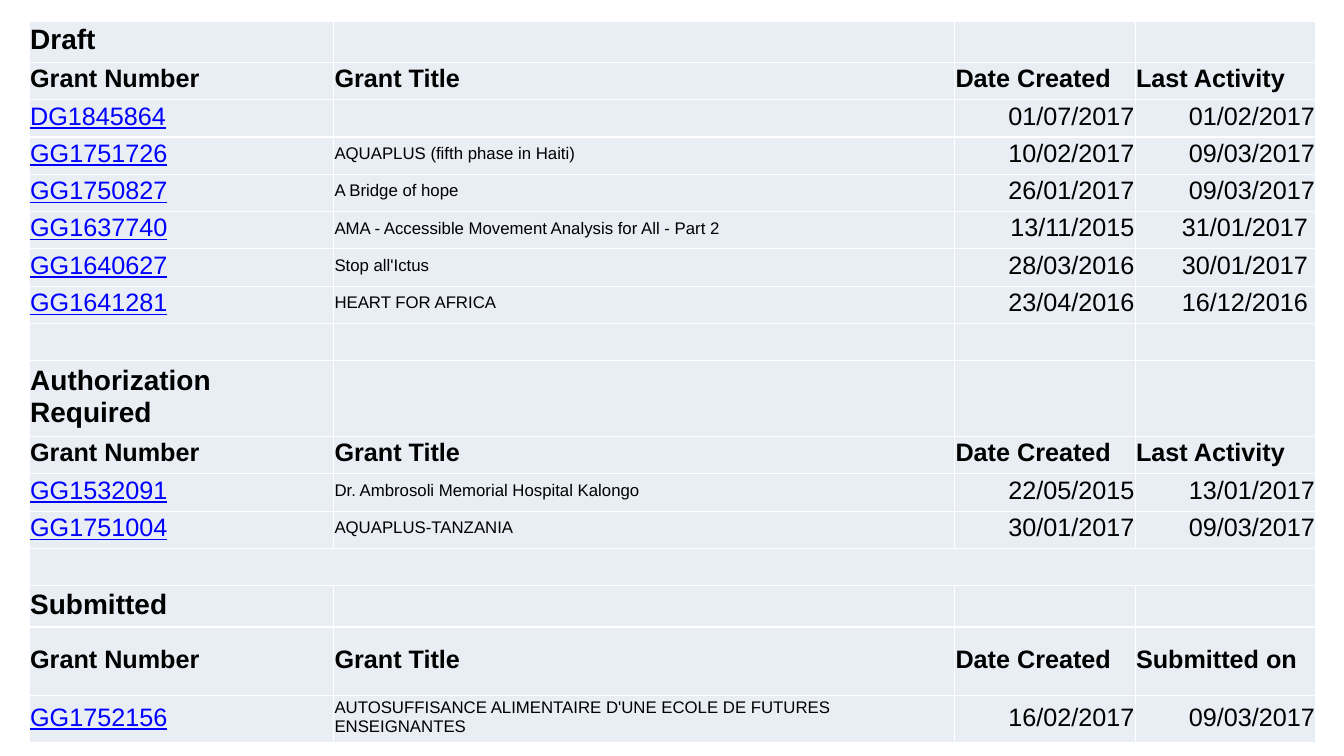
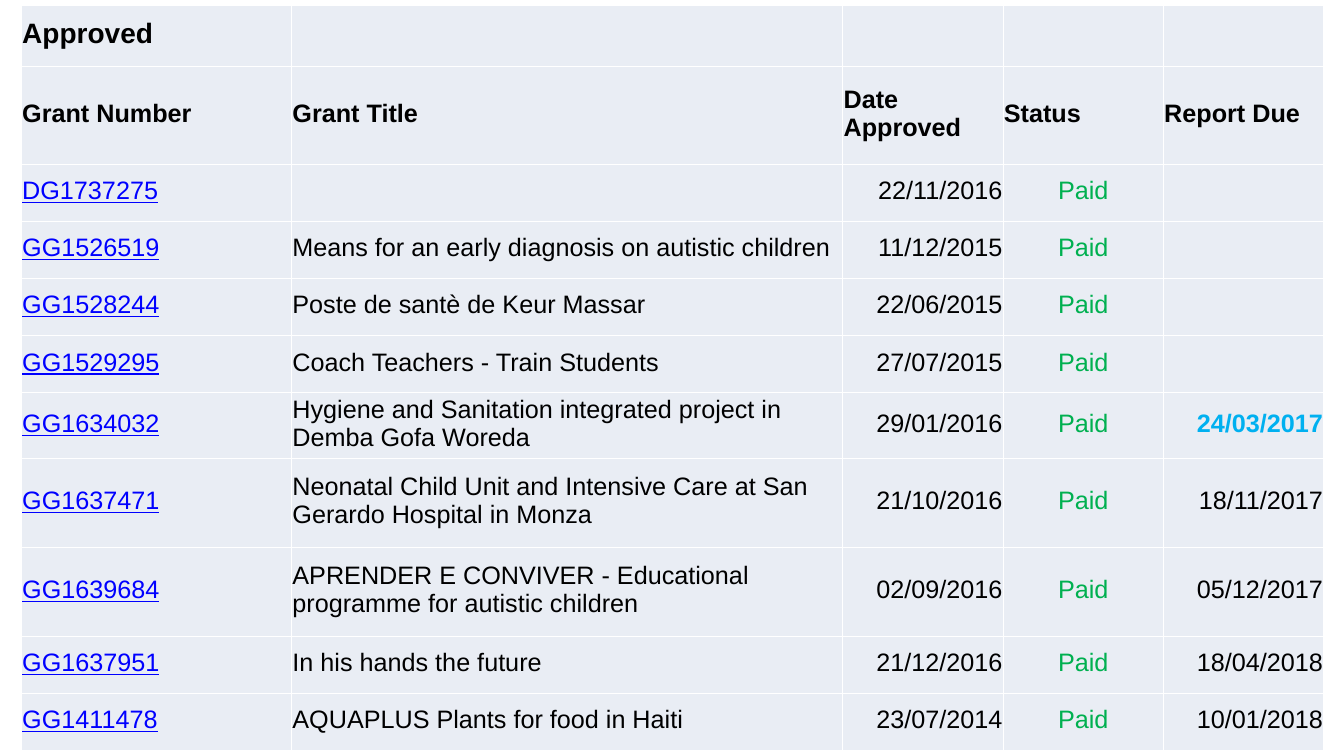
from lxml import etree
from pptx import Presentation
from pptx import util as u
from pptx.dml.color import RGBColor
from pptx.enum import text
from pptx.oxml import ns

Cm, Pt = u.Cm, u.Pt
ALIGN = text.PP_ALIGN

COLORS = {
    "cell": "E9EDF4",
    "border": "FFFFFF",
    "text": "000000",
    "grant": "0000FF",
    "paid": "00B050",
    "next_due": "00B0F0",
}
FONT = "Arial"
NEXT_DUE = "24/03/2017"
INDENTED_DATES = {"31/01/2017", "30/01/2017", "16/12/2016"}

OPEN_COLUMNS = ["Grant Number", "Grant Title", "Date Created", "Last Activity"]
SUBMITTED_COLUMNS = OPEN_COLUMNS[:3] + ["Submitted on"]
APPROVED_COLUMNS = ["Grant Number", "Grant Title", "Date Approved", "Status", "Report Due"]

PENDING = {
    "left": 0.74, "top": 0.53, "widths": [7.67, 15.65, 4.55, 4.55],
    "row_height": 0.94, "title_size": 12,
    "heights": {0: 1.04, 9: 1.91, 14: 1.04, 15: 1.73, 16: 1.19},
    "merged_rows": [13],
    "rows": [
        ("section", ["Draft"]),
        ("header", OPEN_COLUMNS),
        ("grant", ["DG1845864", "", "01/07/2017", "01/02/2017"]),
        ("grant", ["GG1751726", "AQUAPLUS (fifth phase in Haiti)", "10/02/2017", "09/03/2017"]),
        ("grant", ["GG1750827", "A Bridge of hope", "26/01/2017", "09/03/2017"]),
        ("grant", ["GG1637740", "AMA - Accessible Movement Analysis for All - Part 2",
                   "13/11/2015", "31/01/2017"]),
        ("grant", ["GG1640627", "Stop all'Ictus", "28/03/2016", "30/01/2017"]),
        ("grant", ["GG1641281", "HEART FOR AFRICA", "23/04/2016", "16/12/2016"]),
        ("gap", []),
        ("section", ["Authorization Required"]),
        ("header", OPEN_COLUMNS),
        ("grant", ["GG1532091", "Dr. Ambrosoli Memorial Hospital Kalongo",
                   "22/05/2015", "13/01/2017"]),
        ("grant", ["GG1751004", "AQUAPLUS-TANZANIA", "30/01/2017", "09/03/2017"]),
        ("gap", []),
        ("section", ["Submitted"]),
        ("header", SUBMITTED_COLUMNS),
        ("grant", ["GG1752156", "AUTOSUFFISANCE ALIMENTAIRE D'UNE ECOLE DE FUTURES ENSEIGNANTES",
                   "16/02/2017", "09/03/2017"]),
    ],
}

APPROVED = {
    "left": 0.54, "top": 0.14, "widths": [6.81, 13.89, 4.04, 4.04, 4.04],
    "row_height": 1.44, "title_size": 18,
    "heights": {0: 1.54, 1: 2.46, 6: 1.65, 7: 2.24, 8: 2.24},
    "merged_rows": [],
    "rows": [
        ("section", ["Approved"]),
        ("header", APPROVED_COLUMNS),
        ("grant", ["DG1737275", "", "22/11/2016", "Paid", ""]),
        ("grant", ["GG1526519", "Means for an early diagnosis on autistic children",
                   "11/12/2015", "Paid", ""]),
        ("grant", ["GG1528244", "Poste de santè de Keur Massar", "22/06/2015", "Paid", ""]),
        ("grant", ["GG1529295", "Coach Teachers - Train Students", "27/07/2015", "Paid", ""]),
        ("grant", ["GG1634032", "Hygiene and Sanitation integrated project in Demba Gofa Woreda",
                   "29/01/2016", "Paid", NEXT_DUE]),
        ("grant", ["GG1637471",
                   "Neonatal Child Unit and Intensive Care at San Gerardo Hospital in Monza",
                   "21/10/2016", "Paid", "18/11/2017"]),
        ("grant", ["GG1639684", "APRENDER E CONVIVER - Educational programme for autistic children",
                   "02/09/2016", "Paid", "05/12/2017"]),
        ("grant", ["GG1637951", "In his hands the future", "21/12/2016", "Paid", "18/04/2018"]),
        ("grant", ["GG1411478", "AQUAPLUS Plants for food in Haiti",
                   "23/07/2014", "Paid", "10/01/2018"]),
    ],
}


def rgb(name):
    return RGBColor.from_string(COLORS[name])


def format_cell(cell):
    properties = cell._tc.get_or_add_tcPr()
    for side in ("lnL", "lnR", "lnT", "lnB"):
        line = etree.SubElement(properties, ns.qn("a:" + side), w=str(Pt(1)))
        fill = etree.SubElement(line, ns.qn("a:solidFill"))
        etree.SubElement(fill, ns.qn("a:srgbClr"), val=COLORS["border"])
    cell.fill.solid()
    cell.fill.fore_color.rgb = rgb("cell")
    cell.vertical_anchor = text.MSO_ANCHOR.MIDDLE
    cell.margin_left = cell.margin_top = cell.margin_right = Cm(0.02)
    cell.margin_bottom = Cm(0.12)


def write_cell(cell, kind, column, value, title_size):
    size, color, align = 18, "text", ALIGN.LEFT
    bold = kind != "grant" or value == NEXT_DUE
    is_number = kind == "grant" and column == 0
    if kind == "section":
        size = 20
    elif is_number:
        color = "grant"
    elif kind == "grant" and column == 1:
        size = title_size
    elif value == "Paid":
        color, align = "paid", ALIGN.CENTER
    elif kind == "grant":
        align = ALIGN.RIGHT
        if value == NEXT_DUE:
            color = "next_due"
        if column == 3 and value in INDENTED_DATES:
            cell.margin_right = Cm(0.2)
    paragraph = cell.text_frame.paragraphs[0]
    paragraph.alignment = align
    run = paragraph.add_run()
    run.text = value
    run.font.name = FONT
    run.font.size = Pt(size)
    run.font.bold = bold
    run.font.underline = is_number
    run.font.color.rgb = rgb(color)


def add_grants(deck, grants):
    slide = deck.slides.add_slide(deck.slide_layouts[6])
    widths, rows = grants["widths"], grants["rows"]
    heights = [grants["heights"].get(i, grants["row_height"]) for i in range(len(rows))]
    table = slide.shapes.add_table(
        len(rows), len(widths), Cm(grants["left"]), Cm(grants["top"]),
        Cm(sum(widths)), Cm(sum(heights))).table
    table.first_row = table.horz_banding = False
    for column, width in zip(table.columns, widths):
        column.width = Cm(width)
    for r, (kind, values) in enumerate(rows):
        table.rows[r].height = Cm(heights[r])
        for c in range(len(widths)):
            format_cell(table.cell(r, c))
        for c, value in enumerate(values):
            if value:
                write_cell(table.cell(r, c), kind, c, value, grants["title_size"])
    for r in grants["merged_rows"]:
        table.cell(r, 0).merge(table.cell(r, len(widths) - 1))


def main():
    deck = Presentation()
    deck.slide_width, deck.slide_height = Cm(33.87), Cm(19.05)
    for grants in (PENDING, APPROVED):
        add_grants(deck, grants)
    deck.save("out.pptx")


if __name__ == "__main__":
    main()
